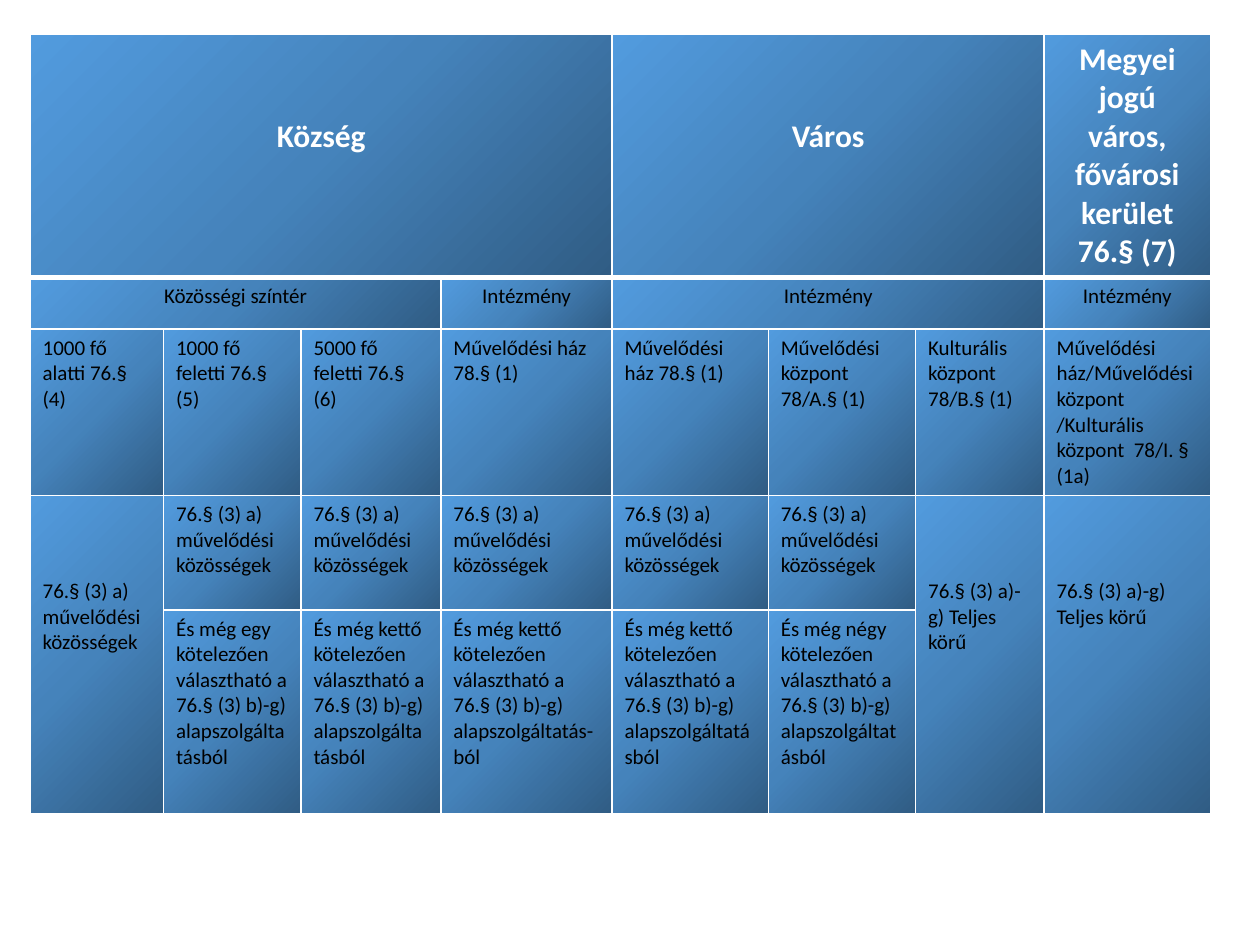
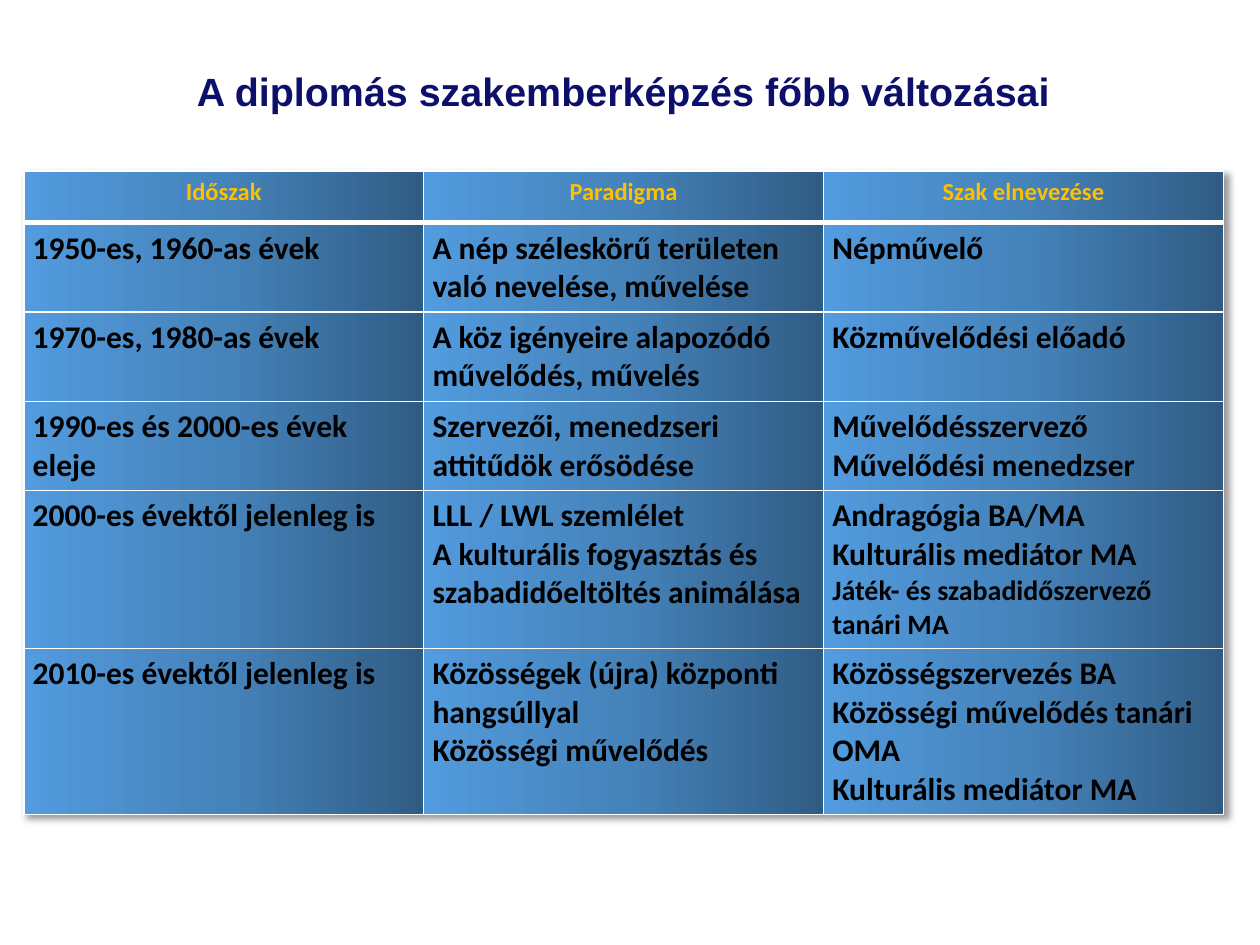
from dataclasses import dataclass
from typing import Optional

from lxml.etree import SubElement
from pptx import Presentation
from pptx.dml.color import RGBColor
from pptx.enum.text import MSO_ANCHOR, PP_ALIGN
from pptx.oxml import parse_xml
from pptx.oxml.ns import nsdecls, qn
from pptx.util import Cm, Pt

# Shared look
WHITE = RGBColor(0xFF, 0xFF, 0xFF)
BLACK = RGBColor(0x00, 0x00, 0x00)
GOLD = RGBColor(0xFF, 0xC0, 0x00)
NAVY = RGBColor(0x0C, 0x10, 0x6A)
DARK = RGBColor(0x30, 0x5C, 0x84)
MID = RGBColor(0x45, 0x83, 0xBB)
LIGHT = RGBColor(0x52, 0x9B, 0xDE)
BODY = "Calibri"
HEAD = "Arial"
LOW = 1.68  # top margin of cells whose text sits two header lines lower

CORNER = ('<a:path path="circle"><a:fillToRect l="100000" t="100000"/></a:path>'
          '<a:tileRect r="-100000" b="-100000"/>')
ACROSS = '<a:lin ang="10800000" scaled="0"/>'


@dataclass
class Line:
    text: str
    size: float


@dataclass
class Slot:
    row: int
    col: int
    lines: list[str | Line]
    rows: int = 1
    cols: int = 1
    size: float = 12
    color: RGBColor = BLACK
    bold: bool = False
    center: bool = False
    top: Optional[float] = None


@dataclass
class Grid:
    left: float
    top: float
    cols: list[float]
    rows: list[float]
    slots: list[Slot]
    shade: str
    side: float = 0.25
    shadow: bool = False


def write(frame, lines: list, *, size: float, color: RGBColor, font: str = BODY,
          bold: bool = False, center: bool = False, space: Optional[float] = None) -> None:
    """Fill a text frame with one paragraph per line."""
    frame.word_wrap = True
    for i, line in enumerate(lines):
        if not isinstance(line, Line):
            line = Line(line, size)
        para = frame.paragraphs[0] if i == 0 else frame.add_paragraph()
        para.alignment = PP_ALIGN.CENTER if center else PP_ALIGN.LEFT
        if space:
            para.line_spacing = space
        run = para.add_run()
        run.text = line.text
        run.font.name, run.font.size = font, Pt(line.size)
        run.font.bold, run.font.color.rgb = bold, color


def edge(props, side: str, width: float) -> None:
    """Add one white cell border."""
    line = SubElement(props, qn(f"a:ln{side}"), w=str(Pt(width)))
    fill = SubElement(line, qn("a:solidFill"))
    SubElement(fill, qn("a:srgbClr"), val=str(WHITE))


def paint(cell, row: int, shade: str) -> None:
    """Set borders and gradient; the rule under the header row is thicker."""
    props = cell._tc.get_or_add_tcPr()
    for side in "LRTB":
        thick = (row, side) in ((0, "B"), (1, "T"))
        edge(props, side, 3 if thick else 1)
    stops = "".join(f'<a:gs pos="{pos}"><a:srgbClr val="{color}"/></a:gs>'
                    for pos, color in ((0, DARK), (50000, MID), (100000, LIGHT)))
    props.append(parse_xml(f'<a:gradFill {nsdecls("a")} rotWithShape="1">'
                           f'<a:gsLst>{stops}</a:gsLst>{shade}</a:gradFill>'))


def draw(slide, grid: Grid) -> None:
    """Draw a gradient table."""
    table = slide.shapes.add_table(
        len(grid.rows), len(grid.cols), Cm(grid.left), Cm(grid.top),
        Cm(sum(grid.cols)), Cm(sum(grid.rows))).table
    table.horz_banding = False
    for col, width in zip(table.columns, grid.cols):
        col.width = Cm(width)
    for i, (row, height) in enumerate(zip(table.rows, grid.rows)):
        row.height = Cm(height)
        for cell in row.cells:
            cell.margin_left = cell.margin_right = Cm(grid.side)
            paint(cell, i, grid.shade)
    for slot in grid.slots:
        cell = table.cell(slot.row, slot.col)
        if slot.rows * slot.cols > 1:
            cell.merge(table.cell(slot.row + slot.rows - 1, slot.col + slot.cols - 1))
        if slot.top:
            cell.margin_top = Cm(slot.top)
        write(cell.text_frame, slot.lines, size=slot.size, color=slot.color,
              bold=slot.bold, center=slot.center)
    if grid.shadow:
        table._tbl.tblPr.insert(0, parse_xml(
            f'<a:effectLst {nsdecls("a")}><a:outerShdw blurRad="50800" dist="38100" '
            f'dir="2700000" algn="tl"><a:srgbClr val="{BLACK}"><a:alpha val="40000"/>'
            '</a:srgbClr></a:outerShdw></a:effectLst>'))


def towns() -> Grid:
    """Duties by type of settlement."""
    top = dict(size=18, color=WHITE, bold=True, center=True)
    slots = [
        Slot(0, 0, ["Község"], cols=4, top=LOW, **top),
        Slot(0, 4, ["Város"], cols=3, top=LOW, **top),
        Slot(0, 7, ["Megyei jogú város, fővárosi kerület 76.§ (7)"], **top),
        Slot(1, 0, ["Közösségi színtér"], cols=3, center=True),
    ]
    slots += [Slot(1, col, ["Intézmény"], cols=span, center=True)
              for col, span in ((3, 1), (4, 3), (7, 1))]
    kinds = [
        "1000 fő alatti 76.§ (4)", "1000 fő feletti 76.§ (5)",
        "5000 fő feletti 76.§ (6)", "Művelődési ház 78.§ (1)",
        "Művelődési ház 78.§ (1)", "Művelődési központ 78/A.§ (1)",
        "Kulturális központ 78/B.§ (1)",
        "Művelődési ház/Művelődési központ /Kulturális központ  78/I. § (1a)",
    ]
    slots += [Slot(2, col, [kind]) for col, kind in enumerate(kinds)]

    # Basic duty, then the number of further ones to choose
    basic = "76.§ (3) a) művelődési közösségek"
    full = "76.§ (3) a)-g) Teljes körű"
    slots += [Slot(3, col, [text], rows=2, top=LOW)
              for col, text in ((0, basic), (6, full), (7, full))]
    for col, count in enumerate(["egy", "kettő", "kettő", "kettő", "négy"], 1):
        ending = "-ból" if col == 3 else "ból"
        more = (f"És még {count} kötelezően választható a 76.§ (3) b)-g) "
                f"alapszolgáltatás{ending}")
        slots += [Slot(3, col, [basic]), Slot(4, col, [more])]
    return Grid(0.61, 0.69, [2.69, 2.77, 2.82, 3.45, 3.15, 2.97, 2.59, 3.35],
                [4.9, 1.04, 3.35, 2.31, 4.11], slots, CORNER)


def eras() -> Grid:
    """Degree courses by period."""
    heads = ["Időszak", "Paradigma", "Szak elnevezése"]
    rows = [
        (["1950-es, 1960-as évek"],
         ["A nép széleskörű területen való nevelése, művelése"],
         ["Népművelő"]),
        (["1970-es, 1980-as évek"],
         ["A köz igényeire alapozódó művelődés, művelés"],
         ["Közművelődési előadó"]),
        (["1990-es és 2000-es évek eleje"],
         ["Szervezői, menedzseri attitűdök erősödése"],
         ["Művelődésszervező", "Művelődési menedzser"]),
        (["2000-es évektől jelenleg is"],
         ["LLL / LWL szemlélet",
          "A kulturális fogyasztás és szabadidőeltöltés animálása"],
         ["Andragógia BA/MA", "Kulturális mediátor MA",
          Line("Játék- és szabadidőszervező tanári MA", 16)]),
        (["2010-es évektől jelenleg is"],
         ["Közösségek (újra) központi hangsúllyal", "Közösségi művelődés"],
         ["Közösségszervezés BA", "Közösségi művelődés tanári OMA",
          "Kulturális mediátor MA"]),
    ]
    slots = [Slot(0, col, [head], size=14, color=GOLD, bold=True, center=True)
             for col, head in enumerate(heads)]
    slots += [Slot(i, col, lines, size=18, bold=True)
              for i, row in enumerate(rows, 1) for col, lines in enumerate(row)]
    return Grid(0.48, 3.45, [8.06] * 3, [1.04, 1.8, 1.8, 1.8, 3.18, 3.35],
                slots, ACROSS, side=0.18, shadow=True)


def title(slide, text: str) -> None:
    """Add the slide title."""
    frame = slide.shapes.add_textbox(Cm(1.63), Cm(0.97), Cm(21.9), Cm(1.85)).text_frame
    frame.vertical_anchor = MSO_ANCHOR.MIDDLE
    write(frame, [text], size=22.5, color=NAVY, font=HEAD, bold=True,
          center=True, space=0.9)


def main() -> None:
    deck = Presentation()
    deck.slide_width, deck.slide_height = Cm(25.4), Cm(19.05)
    blank = deck.slide_layouts[6]

    # Settlements
    draw(deck.slides.add_slide(blank), towns())

    # Periods of training
    slide = deck.slides.add_slide(blank)
    title(slide, "A diplomás szakemberképzés főbb változásai")
    draw(slide, eras())

    deck.save("out.pptx")


if __name__ == "__main__":
    main()
